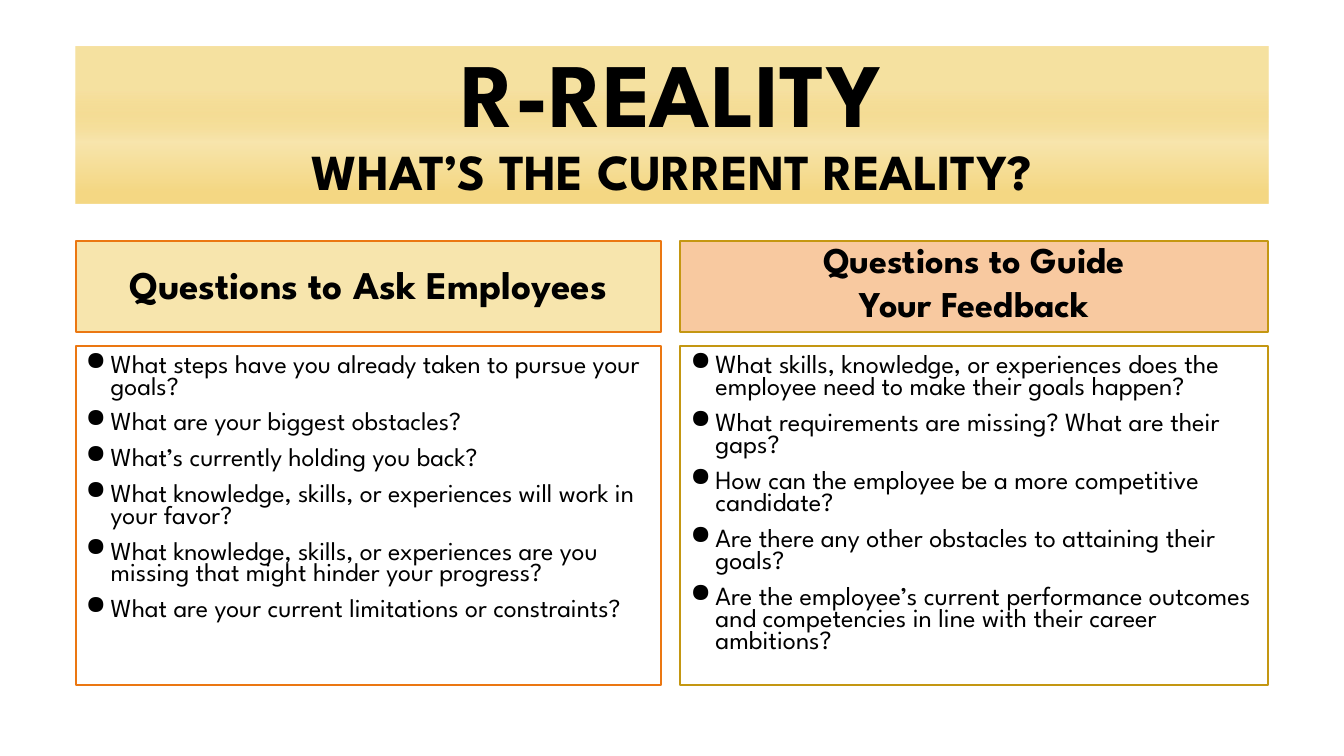
from dataclasses import dataclass

from lxml.etree import SubElement
from pptx import Presentation
from pptx.dml.color import RGBColor
from pptx.enum.shapes import MSO_SHAPE as SHAPE
from pptx.enum.text import MSO_ANCHOR as ANCHOR, PP_ALIGN as ALIGN
from pptx.oxml.ns import qn
from pptx.util import Pt


@dataclass(frozen=True)
class Theme:
    font: str = "League Spartan"
    ink: str = "000000"
    sand: str = "F7E5AD"
    peach: str = "F8C9A0"
    orange: str = "EB7712"
    gold: str = "C49712"
    # position %, colour, opacity %
    banner: tuple = ((28, "ECBD31", 45), (60, "F7E5AD", 100), (92, "F4D783", 100))
    title_size: float = 64.8
    subtitle_size: float = 36
    border: float = 1.5


THEME = Theme()


@dataclass(frozen=True)
class Box:
    left: float
    top: float
    width: float
    height: float


@dataclass(frozen=True)
class Column:
    heading: tuple
    questions: tuple
    border: str
    heading_fill: str
    heading_size: float
    heading_spacing: float
    question_size: float


EMPLOYEES = Column(
    heading=("Questions to Ask Employees",),
    questions=(
        "What steps have you already taken to pursue your goals?",
        "What are your biggest obstacles?",
        "What’s currently holding you back?",
        "What knowledge, skills, or experiences will work in your favor?",
        "What knowledge, skills, or experiences are you missing that might "
        "hinder your progress?",
        "What are your current limitations or constraints?",
    ),
    border=THEME.orange, heading_fill=THEME.sand,
    heading_size=28, heading_spacing=0.9, question_size=18.5,
)
FEEDBACK = Column(
    heading=("Questions to Guide", "Your Feedback"),
    questions=(
        "What skills, knowledge, or experiences does the employee need to make "
        "their goals happen?",
        "What requirements are missing? What are their gaps?",
        "How can the employee be a more competitive candidate?",
        "Are there any other obstacles to attaining their goals?",
        "Are the employee’s current performance outcomes and competencies in "
        "line with their career ambitions?",
    ),
    border=THEME.gold, heading_fill=THEME.peach,
    heading_size=25.9, heading_spacing=0.7, question_size=18.7,
)


def add_panel(slide, box, fill=None, border=None, anchor=ANCHOR.MIDDLE, inset_top=3.6):
    panel = slide.shapes.add_shape(
        SHAPE.RECTANGLE, Pt(box.left), Pt(box.top), Pt(box.width), Pt(box.height))
    panel.shadow.inherit = False
    if fill:
        panel.fill.solid()
        panel.fill.fore_color.rgb = RGBColor.from_string(fill)
    else:
        panel.fill.background()
    if border:
        panel.line.color.rgb = RGBColor.from_string(border)
        panel.line.width = Pt(THEME.border)
    else:
        panel.line.fill.background()
    panel.text_frame.word_wrap = True
    panel.text_frame.vertical_anchor = anchor
    panel.text_frame.margin_top = Pt(inset_top)
    return panel


def write(frame, text, size, bold=False, align=ALIGN.CENTER, spacing=0.9,
          before=0, bullet=None, indent=18):
    """Add text as the next paragraph, filling the empty first one if there is one."""
    first = not frame.text
    paragraph = frame.paragraphs[0] if first else frame.add_paragraph()
    if bullet:
        properties = paragraph._p.get_or_add_pPr()
        properties.set("marL", str(Pt(indent)))
        properties.set("indent", str(-Pt(indent)))
        SubElement(properties, qn("a:buChar"), char=bullet)
    paragraph.alignment = align
    paragraph.line_spacing = spacing
    paragraph.space_before = Pt(0 if first else before)
    run = paragraph.add_run()
    run.text = text
    run.font.name = THEME.font
    run.font.size = Pt(size)
    run.font.bold = bold
    run.font.color.rgb = RGBColor.from_string(THEME.ink)


def shade_downwards(shape, stops):
    shape.fill.gradient()
    shape.fill.gradient_angle = 270
    stop_list = shape._element.spPr.find(qn("a:gradFill")).find(qn("a:gsLst"))
    for stop in list(stop_list):
        stop_list.remove(stop)
    for position, colour, opacity in stops:
        stop = SubElement(stop_list, qn("a:gs"), pos=str(position * 1000))
        shade = SubElement(stop, qn("a:srgbClr"), val=colour)
        if opacity < 100:
            SubElement(shade, qn("a:alpha"), val=str(opacity * 1000))


def add_banner(slide, box):
    banner = add_panel(slide, box)
    shade_downwards(banner, THEME.banner)
    write(banner.text_frame, "R-REALITY", THEME.title_size, bold=True)
    write(banner.text_frame, "WHAT’S THE CURRENT REALITY?", THEME.subtitle_size, bold=True)


def add_column(slide, box, column, heading_height=65, gap=10):
    heading = add_panel(slide, Box(box.left, box.top, box.width, heading_height),
                        fill=column.heading_fill, border=column.border)
    for line in column.heading:
        write(heading.text_frame, line, column.heading_size, bold=True,
              spacing=column.heading_spacing, before=10)

    offset = heading_height + gap
    questions = add_panel(
        slide, Box(box.left, box.top + offset, box.width, box.height - offset),
        border=column.border, anchor=ANCHOR.TOP, inset_top=7.2)
    for question in column.questions:
        write(questions.text_frame, question, column.question_size,
              align=ALIGN.LEFT, spacing=0.7, before=10, bullet="●")


def main():
    deck = Presentation()
    deck.slide_width, deck.slide_height = Pt(960), Pt(540)
    slide = deck.slides.add_slide(deck.slide_layouts[6])
    add_column(slide, Box(54, 172, 418.3, 317.6), EMPLOYEES)
    add_column(slide, Box(486, 172, 419.8, 317.6), FEEDBACK)
    add_banner(slide, Box(54, 33.1, 851.8, 112.4))
    deck.save("out.pptx")


if __name__ == "__main__":
    main()
